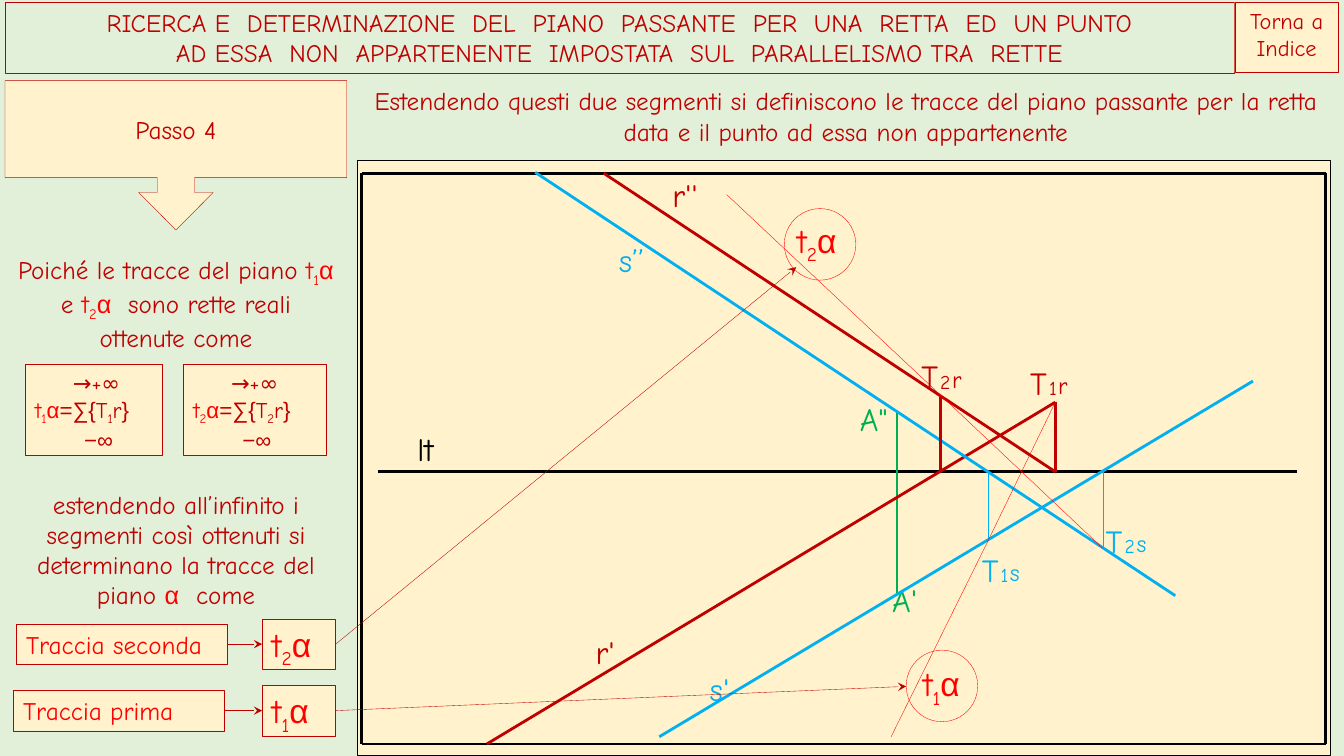
from itertools import pairwise
from lxml import etree
from pptx import Presentation
from pptx.dml.color import RGBColor
from pptx.enum import shapes, text
from pptx.oxml import ns
from pptx.util import Pt

HEX = {"mint": "E2F0D9", "cream": "FFF2CC", "dark": "C00000", "red": "FF0000",
       "blue": "00B0F0", "green": "00B050", "black": "000000"}
RGB = {name: RGBColor.from_string(code) for name, code in HEX.items()}
KIND = shapes.MSO_SHAPE
MID = text.PP_ALIGN.CENTER
LEFT = text.PP_ALIGN.LEFT

deck = Presentation()
deck.slide_width, deck.slide_height = Pt(960), Pt(540)
slide = deck.slides.add_slide(deck.slide_layouts[5])
slide.background.fill.solid()
slide.background.fill.fore_color.rgb = RGB["mint"]
pool = slide.shapes


def box(at, paras=(), size=18, align=LEFT, kind=None, fill=None, edge=None,
        inset=(7.2, 3.6), wrap=True, anchor=text.MSO_ANCHOR.TOP, indents=(), shape=None):
    spot = [Pt(v) for v in at]
    if shape is None:
        shape = pool.add_shape(kind, *spot) if kind else pool.add_textbox(*spot)
    if kind:
        shape.shadow.inherit = False
    for name, value in zip(("left", "top", "width", "height"), spot):
        setattr(shape, name, value)
    if fill:
        shape.fill.solid()
        shape.fill.fore_color.rgb = RGB[fill]
    else:
        shape.fill.background()
    if edge:
        shape.line.color.rgb = RGB[edge]
        shape.line.width = Pt(0 if edge == "black" else 0.25)
    frame = shape.text_frame
    form = {"word_wrap": wrap, "auto_size": text.MSO_AUTO_SIZE.NONE, "vertical_anchor": anchor,
            "margin_left": Pt(inset[0]), "margin_right": Pt(inset[0]),
            "margin_top": Pt(inset[1]), "margin_bottom": Pt(inset[1])}
    for name, value in form.items():
        setattr(frame, name, value)
    for i, runs in enumerate(paras):
        para = frame.add_paragraph() if i else frame.paragraphs[0]
        para.alignment = align
        if indents:
            para._p.get_or_add_pPr().set("marL", str(Pt(indents[i])))
        for words, hue, *style in runs:
            run = para.add_run()
            run.text = words
            run.font.size = Pt(size)
            run.font.name = "Arial" if "arial" in style else "Comic Neue"
            run.font.color.rgb = RGB[hue]
            if "sub" in style:
                run._r.get_or_add_rPr().set("baseline", "-25000")


def line(start, end, hue, width=0.25, arrow=False):
    link = pool.add_connector(shapes.MSO_CONNECTOR.STRAIGHT, *[Pt(v) for v in (*start, *end)])
    link.line.color.rgb = RGB[hue]
    link.line.width = Pt(width)
    if arrow:
        etree.SubElement(link.line._get_or_add_ln(), ns.qn("a:tailEnd"), type="stealth")
    etree.SubElement(link._element.spPr, ns.qn("a:effectLst"))


trace = {n: [("t", "red"), (n, "red", "sub"), ("α", "red", "arial")] for n in "12"}
card = {"kind": KIND.RECTANGLE, "fill": "cream", "edge": "dark"}

box((3.6, 1.4, 877.7, 51.1), [
    [("RICERCA E  DETERMINAZIONE  DEL  PIANO  PASSANTE  PER  UNA  RETTA  ED  UN PUNTO", "dark")],
    [("AD ESSA  NON  APPARTENENTE  IMPOSTATA  SUL  PARALLELISMO TRA  RETTE", "dark")],
], align=MID, edge="dark", shape=pool.title)
box((882, 1.4, 74.2, 50.4), [[("Torna a Indice", "dark")]], 16, MID, **card)
box((3.6, 57.6, 244.1, 106.6), [[("Passo 4", "dark")]], align=MID,
    anchor=text.MSO_ANCHOR.MIDDLE, **{**card, "kind": KIND.DOWN_ARROW_CALLOUT})
box((258.5, 57.6, 691.2, 51.1), [[(
    "Estendendo questi due segmenti si definiscono le tracce del piano passante per la retta "
    "data e il punto ad essa non appartenente", "dark")]], align=MID)
box((255.6, 114.5, 694.8, 425.5), kind=KIND.RECTANGLE, fill="cream", edge="black")

bare = {"inset": (0, 0), "wrap": False}
for words, hue, x, y in [
        ("lt", "black", 298.1, 306.7), ("A'", "green", 637.2, 414.7),
        ("A\"", "green", 614.2, 285.1), ("r'", "dark", 425.5, 451.4),
        ("r''", "dark", 480.2, 125.3), ("s'", "blue", 506.9, 478.1),
        ("s’’", "blue", 442.1, 171.4)]:
    box((x, y, 26, 28), [[(words, hue)]], 23, **bare)

for digit, name, hue, x, y in [
        ("1", "r", "dark", 735.8, 259.2), ("2", "r", "dark", 658.1, 254.9),
        ("1", "s", "blue", 701.3, 393.1), ("2", "s", "blue", 789.8, 372.2)]:
    step = 6.5 if digit == "1" else 8.6
    for words, size, dx, dy, wide, high in [
            ("T", 23, 0, 0, 15.8, 28), (digit, 14, 13.5, 9, step, 17.3),
            (name, 17, 13.5 + step, 5.4, 8, 20.9)]:
        box((x + dx, y + dy, wide, high), [[(words, hue)]], size, **bare)

left, top, right, foot, ground = 258.5, 123.8, 946.8, 531.4, 337
T1r, T2r, T1s, T2s = (753.8, 287.3), (671.8, 282.2), (705.6, 386.6), (787.7, 391.7)
corners = [(left, foot), (right, foot), (right, top), (left, top), (left, foot)]
for start, end in pairwise(corners):
    line(start, end, "black", 0)
for start, end, hue in [
        ((270, ground), (926.6, ground), "black"),
        ((640.8, 294.5), (640.8, 424.8), "green"),
        ((431.3, top), (T1r[0], ground), "dark"),
        ((347.8, foot), T1r, "dark"),
        ((470.9, 526.3), (895, 272.2), "blue"),
        ((382.3, 123.1), (839.5, 425.5), "blue")]:
    line(start, end, hue, 0)
for point, hue in [(T1r, "dark"), (T2r, "dark"), (T1s, "blue"), (T2s, "blue")]:
    line((point[0], ground), point, hue, 0 if hue == "dark" else 0.25)
for start, end in [(T1r, T1s), (T2r, T2s), (T1s, (636.5, 526.3)), ((519.1, 139), T2r)]:
    line(start, end, "red")

box((3.6, 177.8, 244.1, 70.6), [[
    ("Poiché le tracce del piano ", "dark"), *trace["1"], (" e ", "dark"), *trace["2"],
    ("  sono rette reali ottenute come", "dark")]], align=MID)
for n, x, wide in [("1", 18, 97.9), ("2", 131, 102.2)]:
    box((x, 260, wide, 65.5), [
        [("→+∞", "dark")],
        [*trace[n], ("=∑{", "dark", "arial"), ("T", "dark"), (n, "dark", "sub"),
         ("r", "dark"), ("}", "dark", "arial")],
        [("−∞", "dark", "arial")]], 16, indents=(27, 0, 35), **card)
box((3.6, 345.6, 244.1, 94.3), [[
    ("estendendo all’infinito i segmenti così ottenuti si determinano la tracce del piano ", "dark"),
    ("α", "red", "arial"), ("  come", "dark")]], align=MID)

for n, words, x, y, ring, tip in [
        ("2", "Traccia seconda", 11.5, 460.1, (560.2, 149), (568.8, 190.8)),
        ("1", "Traccia prima", 9.4, 507.6, (647.3, 464.4), (647.3, 490.3))]:
    box((x, y - 14.4, 150.5, 28.8), [[(words, "red")]], **card)
    box((187.2, y - 18, 52.6, 36), [trace[n]], 24, **card)
    box((ring[0] + (2.2 if n == "2" else 5), ring[1] + (4.4 if n == "2" else 5.8), 52.6, 36),
        [trace[n]], 24)
    box((*ring, 51.1, 51.1), kind=KIND.OVAL, edge="red")
    line((x + 150.5, y), (187.2, y), "dark", arrow=True)
    line((239.8, y), tip, "dark", arrow=True)

deck.save("out.pptx")
